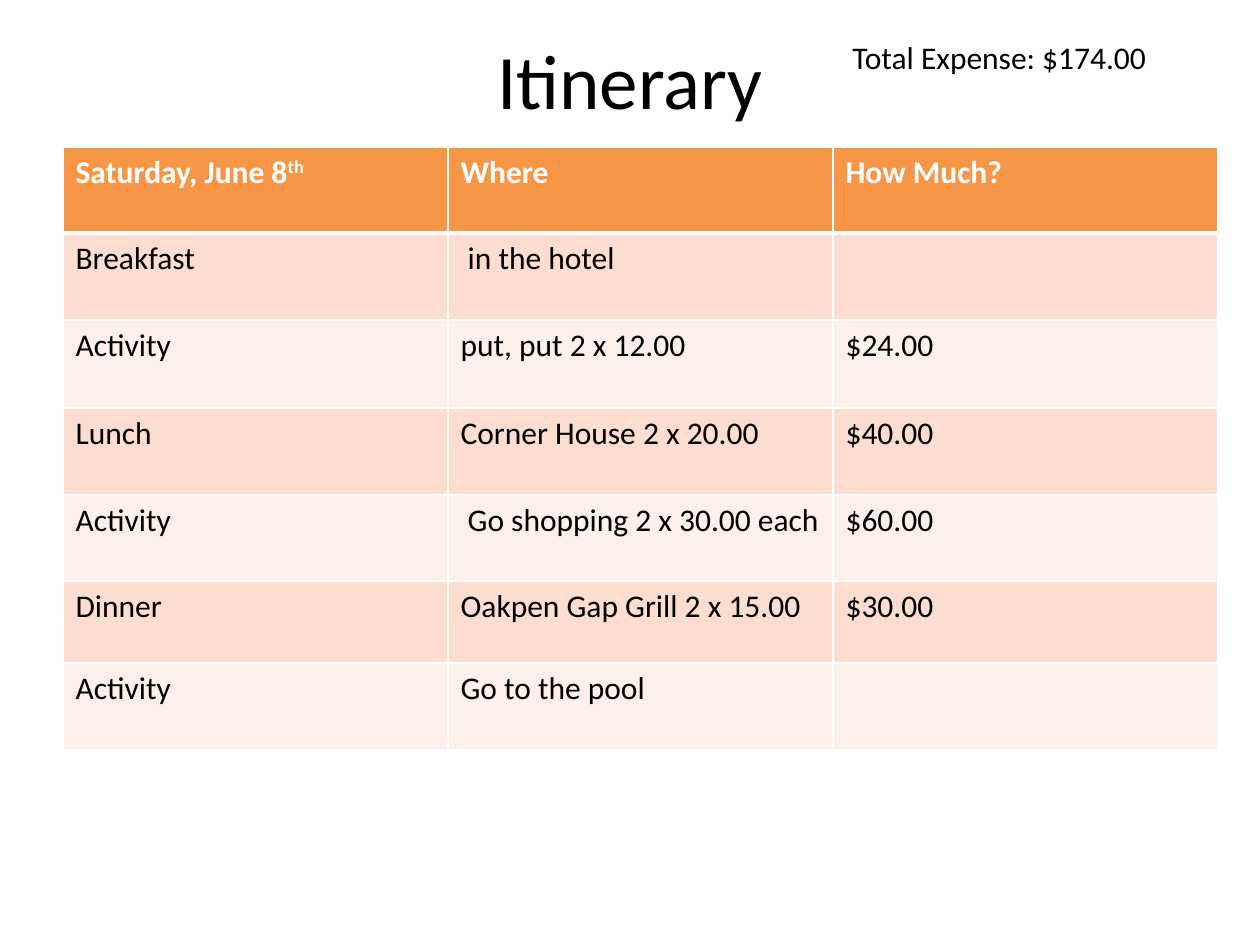
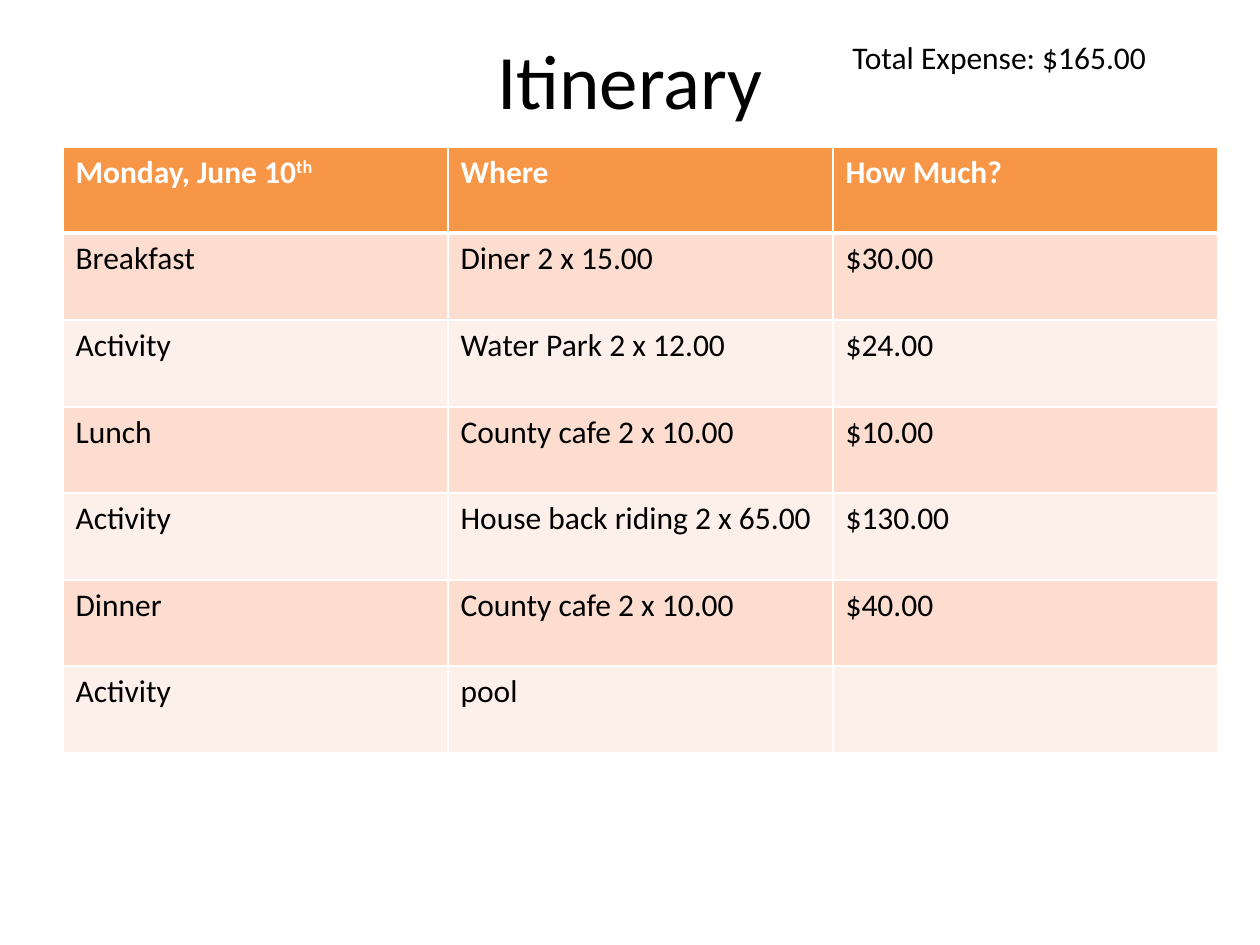
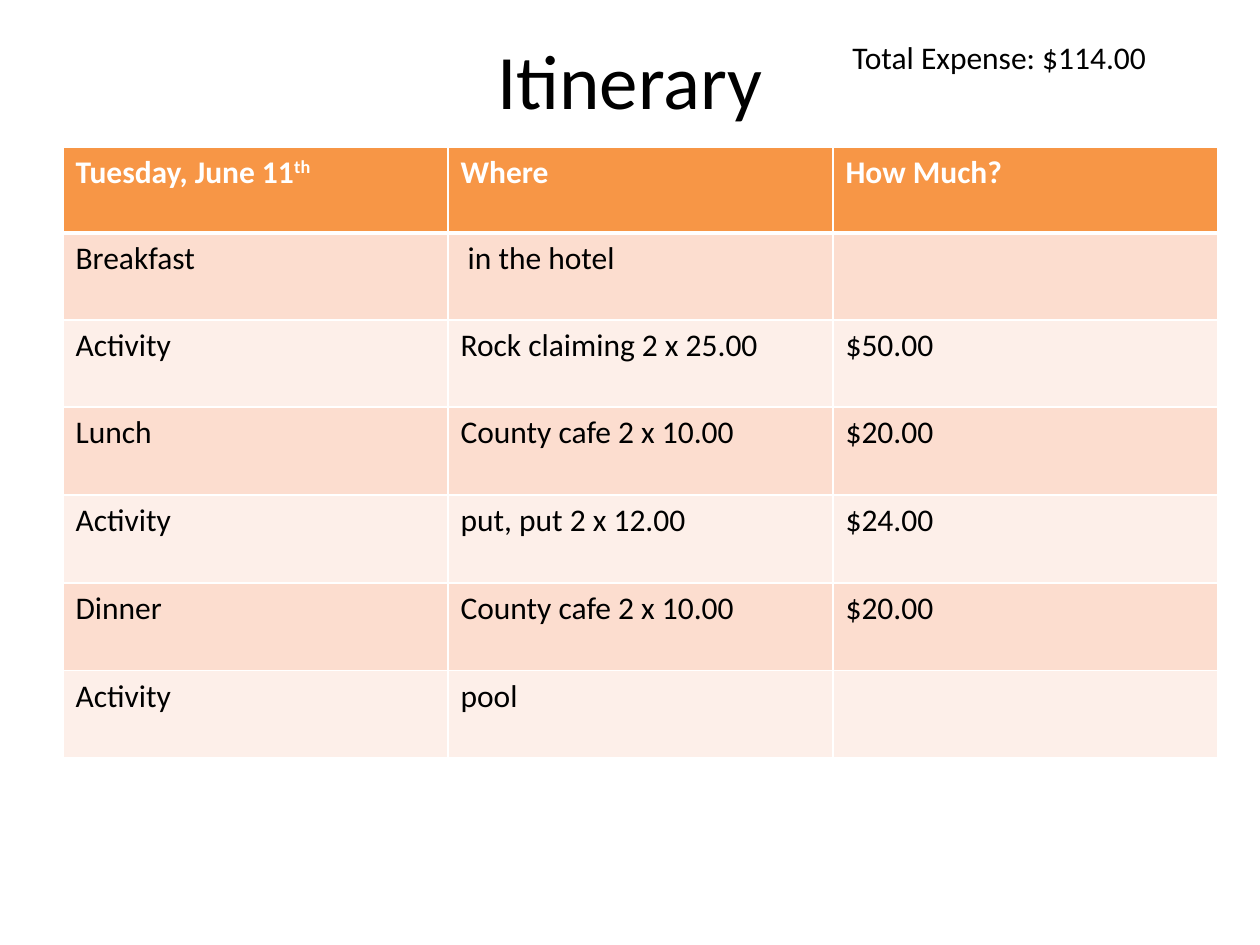
from lxml import etree
from pptx import Presentation
from pptx.dml.color import RGBColor
from pptx.enum.text import MSO_ANCHOR, MSO_AUTO_SIZE, PP_ALIGN
from pptx.oxml.ns import qn
from pptx.util import Emu, Pt

CENTER = PP_ALIGN.CENTER
MIDDLE = MSO_ANCHOR.MIDDLE
FIT_SHAPE = MSO_AUTO_SIZE.SHAPE_TO_FIT_TEXT
TITLE_ONLY = 5

EMU_PER_PX = 914400 / 126
FONT = "Calibri"
BLACK, WHITE = "000000", "FFFFFF"
ORANGE = "F79646"
BANDS = ["FCDDCF", "FDEFE9"]
TITLE_SIZE, BODY_SIZE = 44, 18
THIN, THICK = 1, 3

# Boxes are left, top, width, height in px.
SLIDE_SIZE = (1260, 945)
TITLE_BOX = (63, 0, 1134, 158)
TOTAL_BOX = (840, 32, 388, 50)
TABLE_BOX = (63, 147, 1155)

PARTS_OF_DAY = ["Breakfast", "Activity", "Lunch", "Activity", "Dinner", "Activity"]

# Each plan line is where and how much, in the order of PARTS_OF_DAY.
DAYS = [
    {
        "date": "Saturday, June 8",
        "total": "$174.00",
        "row_heights": [86, 87, 88, 87, 86, 82, 87],
        "plan": [
            (" in the hotel", ""),
            ("put, put 2 x 12.00", "$24.00"),
            ("Corner House 2 x 20.00", "$40.00"),
            (" Go shopping 2 x 30.00 each", "$60.00"),
            ("Oakpen Gap Grill 2 x 15.00", "$30.00"),
            ("Go to the pool", ""),
        ],
    },
    {
        "date": "Monday, June 10",
        "total": "$165.00",
        "row_heights": [86, 87, 87, 86, 87, 86, 87],
        "plan": [
            ("Diner 2 x 15.00", "$30.00"),
            ("Water Park 2 x 12.00", "$24.00"),
            ("County cafe 2 x 10.00", "$10.00"),
            ("House back riding 2 x 65.00", "$130.00"),
            ("County cafe 2 x 10.00", "$40.00"),
            ("pool", ""),
        ],
    },
    {
        "date": "Tuesday, June 11",
        "total": "$114.00",
        "row_heights": [86, 87, 87, 88, 88, 88, 87],
        "plan": [
            (" in the hotel", ""),
            ("Rock claiming 2 x 25.00", "$50.00"),
            ("County cafe 2 x 10.00", "$20.00"),
            ("put, put 2 x 12.00", "$24.00"),
            ("County cafe 2 x 10.00", "$20.00"),
            ("pool", ""),
        ],
    },
]


def px(length):
    return Emu(round(length * EMU_PER_PX))


def color(value):
    return RGBColor.from_string(value)


def format_runs(paragraph, size=BODY_SIZE, text_color=BLACK, bold=False):
    for run in paragraph.runs:
        run.font.name = FONT
        run.font.size = Pt(size)
        run.font.bold = bold
        run.font.color.rgb = color(text_color)


def add_title(slide, box):
    title = slide.shapes.title
    title.left, title.top, title.width, title.height = map(px, box)
    title.text_frame.text = "Itinerary"
    title.text_frame.vertical_anchor = MIDDLE
    paragraph = title.text_frame.paragraphs[0]
    paragraph.alignment = CENTER
    format_runs(paragraph, TITLE_SIZE)


def add_total(slide, box, total):
    text_frame = slide.shapes.add_textbox(*map(px, box)).text_frame
    text_frame.word_wrap = True
    text_frame.auto_size = FIT_SHAPE
    text_frame.text = f"Total Expense: {total}"
    format_runs(text_frame.paragraphs[0])


def set_borders(cell, top, bottom):
    """Draw white borders; this must come before the cell's fill in the XML."""
    properties = cell._tc.get_or_add_tcPr()
    for side, width in (("L", THIN), ("R", THIN), ("T", top), ("B", bottom)):
        line = etree.SubElement(properties, qn(f"a:ln{side}"), w=str(Pt(width)))
        fill = etree.SubElement(line, qn("a:solidFill"))
        etree.SubElement(fill, qn("a:srgbClr"), val=WHITE)


def fill_cell(cell, text, row_number):
    is_header = row_number == 0
    set_borders(cell, THICK if row_number == 1 else THIN, THICK if is_header else THIN)
    cell.fill.solid()
    cell.fill.fore_color.rgb = color(ORANGE if is_header else BANDS[(row_number - 1) % 2])
    cell.text_frame.text = text
    format_runs(cell.text_frame.paragraphs[0], text_color=WHITE if is_header else BLACK, bold=is_header)


def add_ordinal(cell):
    """Append a raised "th" to the date."""
    paragraph = cell.text_frame.paragraphs[0]
    run = paragraph.add_run()
    run.text = "th"
    format_runs(paragraph, text_color=WHITE, bold=True)
    run._r.get_or_add_rPr().set("baseline", "30000")


def add_plan_table(slide, box, day):
    left, top, width = box
    heights = day["row_heights"]
    rows = [(day["date"], "Where", "How Much?")]
    rows += [(part, *line) for part, line in zip(PARTS_OF_DAY, day["plan"])]
    column_count = len(rows[0])
    table = slide.shapes.add_table(
        len(rows), column_count, px(left), px(top), px(width), px(sum(heights))
    ).table
    for column in table.columns:
        column.width = px(width // column_count)
    for row_number, (texts, height) in enumerate(zip(rows, heights)):
        table.rows[row_number].height = px(height)
        for column_number, text in enumerate(texts):
            fill_cell(table.cell(row_number, column_number), text, row_number)
    add_ordinal(table.cell(0, 0))


def add_day_slide(presentation, day):
    slide = presentation.slides.add_slide(presentation.slide_layouts[TITLE_ONLY])
    add_title(slide, TITLE_BOX)
    add_total(slide, TOTAL_BOX, day["total"])
    add_plan_table(slide, TABLE_BOX, day)


def main():
    presentation = Presentation()
    presentation.slide_width, presentation.slide_height = map(px, SLIDE_SIZE)
    for day in DAYS:
        add_day_slide(presentation, day)
    presentation.save("out.pptx")


if __name__ == "__main__":
    main()
